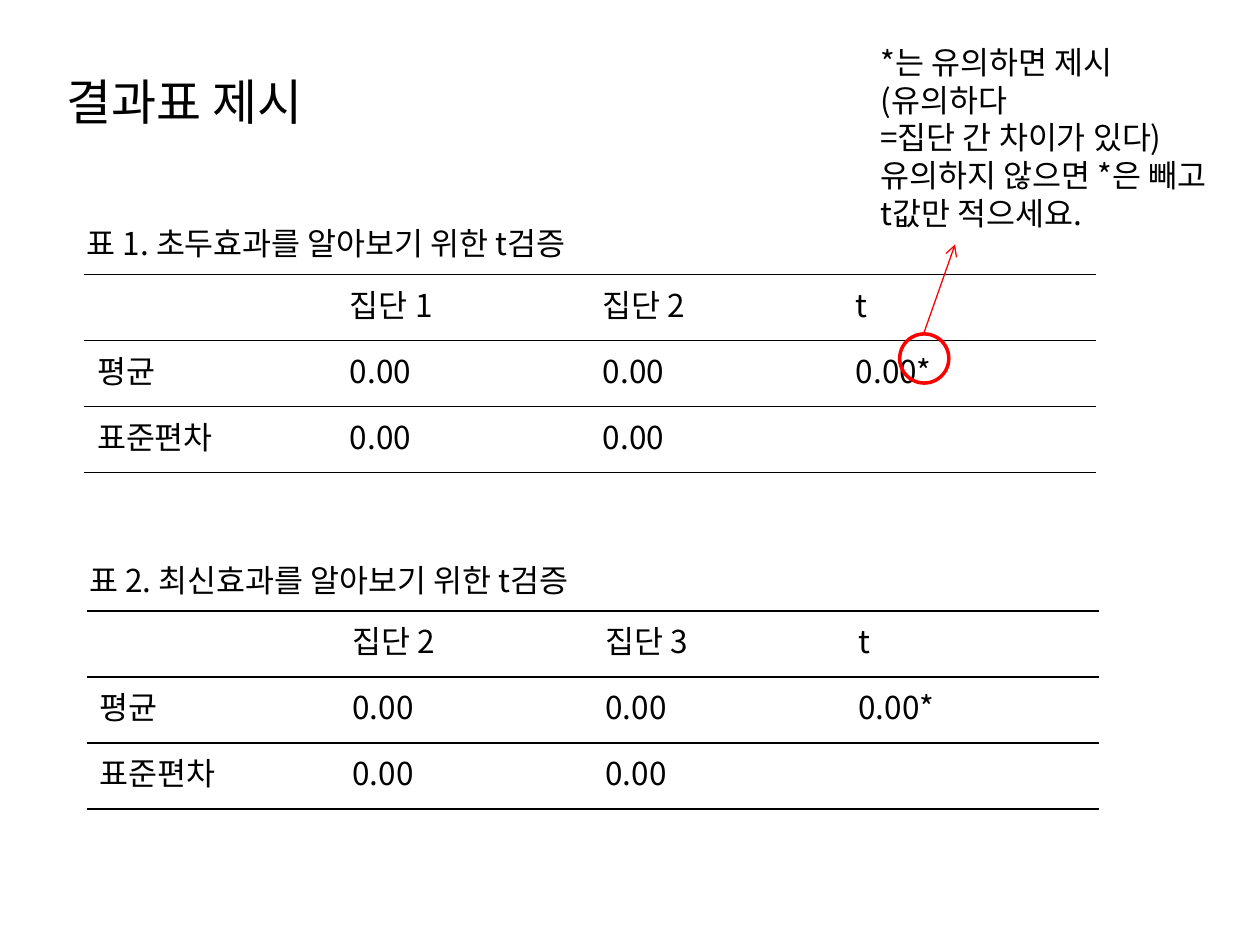
from lxml.etree import SubElement
from pptx import Presentation
from pptx.dml.color import RGBColor
from pptx.enum.shapes import MSO_CONNECTOR, MSO_SHAPE
from pptx.enum.text import MSO_ANCHOR, MSO_AUTO_SIZE, PP_ALIGN
from pptx.oxml.ns import qn
from pptx.util import Inches, Pt

FONT = "Noto Sans CJK KR"
NO_STYLE = "{2D5ABB26-0587-4C30-8999-92F81FD0307C}"
BLACK, RED = "000000", "FF0000"


def rgb(value):
    """Turn a hex string into a colour."""
    return RGBColor.from_string(value)


def format_text(tf, size=18):
    """Give every run the slide's font, and every paragraph left alignment."""
    for p in tf.paragraphs:
        p.alignment = PP_ALIGN.LEFT
        for r in p.runs:
            r.font.size = Pt(size)
            r.font.name = FONT
            r.font.color.rgb = rgb(BLACK)
            ea = SubElement(r.font._element, qn("a:ea"))
            ea.set("typeface", FONT)


def add_title(slide, text, x, y, w, h):
    """Place the slide title in its placeholder."""
    sp = slide.shapes.title
    sp.left, sp.top, sp.width, sp.height = map(Inches, (x, y, w, h))
    tf = sp.text_frame
    tf.text = text
    tf.word_wrap = False
    tf.auto_size = MSO_AUTO_SIZE.NONE
    tf.vertical_anchor = MSO_ANCHOR.TOP
    format_text(tf, 28)


def add_text(slide, text, x, y, w, h):
    """Place an unwrapped text box."""
    tf = slide.shapes.add_textbox(*map(Inches, (x, y, w, h))).text_frame
    tf.word_wrap = False
    tf.text = text
    format_text(tf)


def add_border(cell, side):
    """Draw a thin black rule on one side of a cell."""
    ln = SubElement(cell._tc.get_or_add_tcPr(), qn(f"a:{side}"), w=str(Pt(1)))
    fill = SubElement(ln, qn("a:solidFill"))
    SubElement(fill, qn("a:srgbClr"), val=BLACK)


def add_result_table(slide, caption, groups, x, y, w, h):
    """Place a captioned t-test table with three horizontal rules."""
    rows = [["", *groups, "t"],
            ["평균", "0.00", "0.00", "0.00*"],
            ["표준편차", "0.00", "0.00", ""]]
    frame = slide.shapes.add_table(3, 4, *map(Inches, (x, y, w, h)))
    table = frame.table
    table.first_row = table.horz_banding = False
    table._tbl.tblPr.find(qn("a:tableStyleId")).text = NO_STYLE
    rules = [("lnT", "lnB"), ("lnT",), ("lnB",)]
    for i, row in enumerate(rows):
        for j, text in enumerate(row):
            cell = table.cell(i, j)
            cell.text = text
            format_text(cell.text_frame)
            for side in rules[i]:
                add_border(cell, side)
            cell.fill.background()
    add_text(slide, caption, x - 0.08, y - 0.45, 4.47, 0.4)


def add_callout(slide, note, x, y, w, h):
    """Place the note with an arrow rising to it from the circled star."""
    circle = slide.shapes.add_shape(
        MSO_SHAPE.OVAL, *map(Inches, (x + 0.25, y + 2.36, 0.39, 0.39)))
    circle.shadow.inherit = False
    circle.fill.background()
    circle.line.color.rgb = rgb(RED)
    circle.line.width = Pt(2)
    arrow = slide.shapes.add_connector(
        MSO_CONNECTOR.STRAIGHT, Inches(x + 0.44), Inches(y + 2.36),
        Inches(x + 0.69), Inches(y + 1.65))
    arrow.line.color.rgb = rgb(RED)
    arrow.line.width = Pt(0.75)
    SubElement(arrow.line._get_or_add_ln(), qn("a:tailEnd"), type="arrow")
    SubElement(arrow._element.spPr, qn("a:effectLst"))
    add_text(slide, note, x, y, w, h)


def main():
    """Build the slide and save it."""
    prs = Presentation()
    prs.slide_width, prs.slide_height = Inches(10), Inches(7.5)
    slide = prs.slides.add_slide(prs.slide_layouts[5])
    add_title(slide, "결과표 제시", 0.43, 0.52, 2.3, 0.57)
    add_result_table(slide, "표 1. 초두효과를 알아보기 위한 t검증",
                     ["집단 1", "집단 2"], 0.67, 2.18, 8.03, 1.57)
    add_result_table(slide, "표 2. 최신효과를 알아보기 위한 t검증",
                     ["집단 2", "집단 3"], 0.69, 4.85, 8.03, 1.57)
    note = "\n".join(["*는 유의하면 제시", "(유의하다", "=집단 간 차이가 있다)",
                      "유의하지 않으면 *은 빼고", "t값만 적으세요."])
    add_callout(slide, note, 6.89, 0.29, 3.1, 1.62)
    prs.save("out.pptx")


if __name__ == "__main__":
    main()
